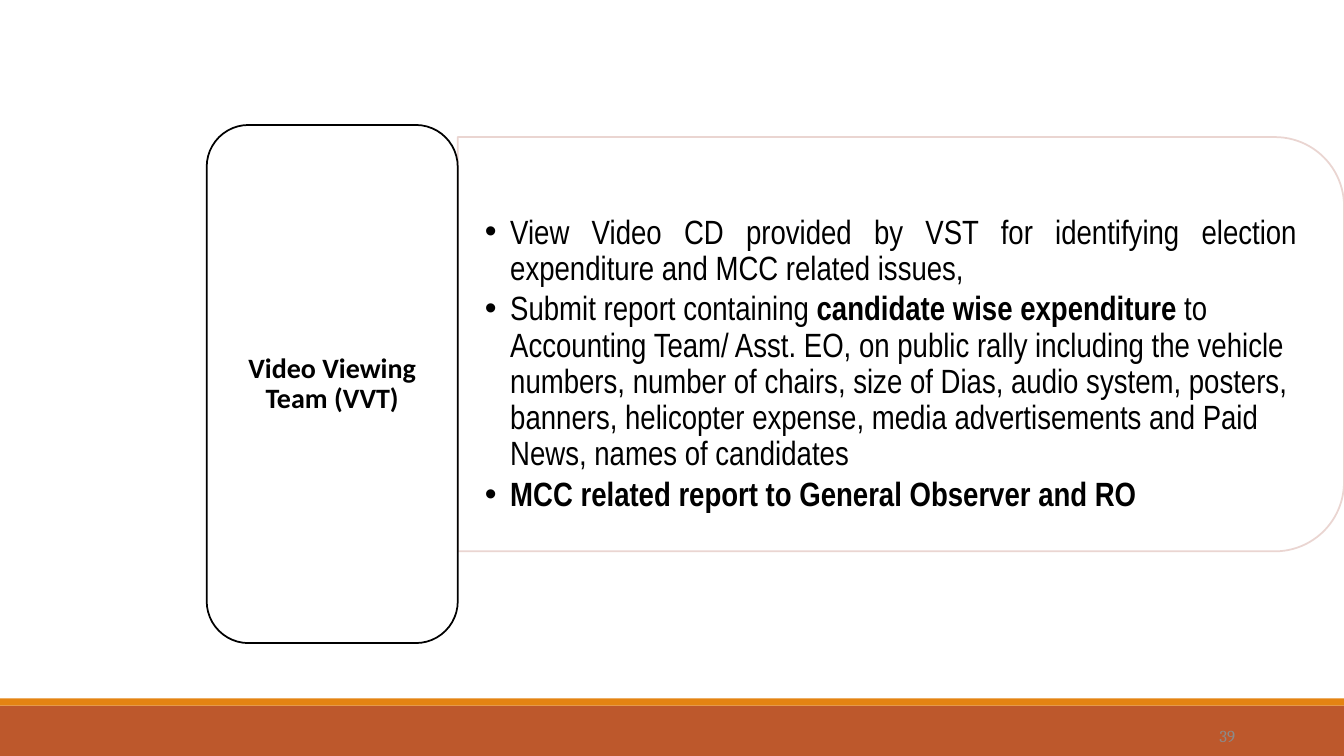
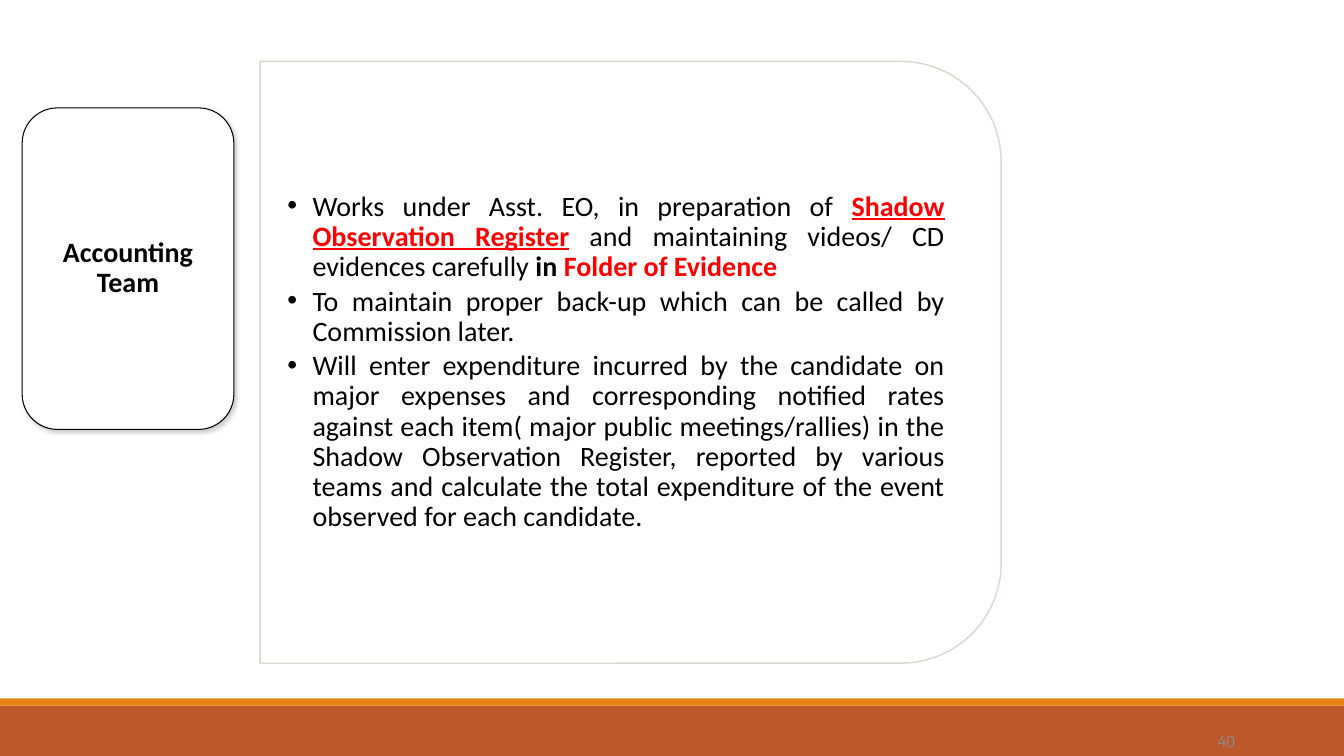
from lxml import etree
from pptx import Presentation
from pptx import util as u
from pptx.dml.color import RGBColor
from pptx.enum import shapes, text
from pptx.oxml import ns

WIDE, HIGH = 13.33, 7.5
BLACK, RED, WHITE = "000000", "FF0000", "FFFFFF"
BANDS = [(7, 0.5, "BD582C"), (6.93, 0.07, "E48312")]
LEFT, JUSTIFY = text.PP_ALIGN.LEFT, text.PP_ALIGN.JUSTIFY
CENTER, RIGHT = text.PP_ALIGN.CENTER, text.PP_ALIGN.RIGHT
BOLD = {"bold": True}
RED_BOLD = {"bold": True, "color": RED}
RED_LINK = {"bold": True, "color": RED, "underline": True}

SLIDES = [
    {
        "number": "39", "number_top": 7.15,
        "label": "Video Viewing Team (VVT)",
        "label_at": (2.05, 1.24, 2.49, 5.14), "label_line": 1.25, "shadow": False,
        "panel_at": (4.54, 1.36, 8.79, 4.11), "panel_line": ("E8D1CD", 1.25),
        "text_at": (4.54, 1.76, 8.59, 3.71), "font": ("Arial Narrow", 24),
        "bullets": [
            (JUSTIFY, [("View Video CD provided by VST for identifying election "
                        "expenditure and MCC related issues, ", {})]),
            (LEFT, [("Submit report containing ", {}),
                    ("candidate wise expenditure ", BOLD),
                    ("to Accounting Team/ Asst. EO, on public rally including the "
                     "vehicle numbers, number of chairs, size of Dias, audio system, "
                     "posters, banners, helicopter expense, media advertisements and "
                     "Paid News, names of candidates", {})]),
            (JUSTIFY, [("MCC related report to General Observer and RO", BOLD)]),
        ],
    },
    {
        "number": "40", "number_top": 7.2,
        "label": "Accounting Team",
        "label_at": (0.22, 1.07, 2.1, 3.19), "label_line": 0.75, "shadow": True,
        "panel_at": (2.58, 0.61, 7.35, 5.97), "panel_line": ("D9D1CF", 1),
        "text_at": (2.58, 0.9, 7.06, 5.39), "font": ("Calibri", 20),
        "bullets": [
            (JUSTIFY, [("Works under Asst. EO, in preparation of ", {}),
                       ("Shadow Observation Register", RED_LINK),
                       (" and maintaining videos/ CD evidences carefully ", {}),
                       ("in ", BOLD),
                       ("Folder of Evidence", RED_BOLD)]),
            (JUSTIFY, [("To maintain proper back-up which can be called by "
                        "Commission later.", {})]),
            (JUSTIFY, [("Will enter expenditure incurred by the candidate on major "
                        "expenses and corresponding notified rates against each item( "
                        "major public meetings/rallies) in the Shadow Observation "
                        "Register, reported by various teams and calculate the total "
                        "expenditure of the event observed for each candidate.", {})]),
        ],
    },
]


def color(value):
    return RGBColor.from_string(value)


def add_xml(parent, tag, **values):
    element = etree.SubElement(parent, ns.qn(tag))
    for name, value in values.items():
        element.set(name, str(value))
    return element


def add_shape(page, kind, at, fill=None, line=None):
    shape = page.shapes.add_shape(kind, *map(u.Inches, at))
    shape.shadow.inherit = False
    if fill:
        shape.fill.solid()
        shape.fill.fore_color.rgb = color(fill)
    else:
        shape.fill.background()
    if line:
        shape.line.color.rgb = color(line[0])
        shape.line.width = u.Pt(line[1])
    else:
        shape.line.fill.background()
    return shape


def set_frame(shape, across, down, anchor=text.MSO_ANCHOR.MIDDLE):
    frame = shape.text_frame
    layout = {"word_wrap": True, "vertical_anchor": anchor,
              "margin_left": u.Inches(across), "margin_right": u.Inches(across),
              "margin_top": u.Inches(down), "margin_bottom": u.Inches(down)}
    for name, value in layout.items():
        setattr(frame, name, value)
    return frame


def write(para, align, spans, font, spacing=0.9):
    para.alignment, para.line_spacing = align, spacing
    for words, style in spans:
        span = para.add_run()
        span.text = words
        look = {"name": font[0], "size": u.Pt(font[1]), "bold": False, **style}
        span.font.color.rgb = color(look.pop("color", BLACK))
        for name, value in look.items():
            setattr(span.font, name, value)


def add_bullets(page, at, bullets, font):
    frame = set_frame(page.shapes.add_textbox(*map(u.Inches, at)), 0.27, 0.14)
    for index, (align, spans) in enumerate(bullets):
        para = frame.add_paragraph() if index else frame.paragraphs[0]
        write(para, align, spans, font)
        if index < len(bullets) - 1:
            para.space_after = u.Pt(3)
        properties = para._p.get_or_add_pPr()
        properties.set("marL", str(u.Inches(0.25)))
        properties.set("indent", str(-u.Inches(0.25)))
        add_xml(properties, "a:buFont", typeface="Arial")
        add_xml(properties, "a:buChar", char="•")


def add_panel(page, at, line):
    left, top, width, height = at
    turn = (width - height) / 2
    panel = add_shape(page, shapes.MSO_SHAPE.ROUND_2_SAME_RECTANGLE,
                      (left + turn, top - turn, height, width), line=line)
    panel.rotation = 90
    tint = panel.line._ln.find(".//" + ns.qn("a:srgbClr"))
    add_xml(tint, "a:alpha", val=90000)


def add_label(page, at, words, width, shadow):
    label = add_shape(page, shapes.MSO_SHAPE.ROUNDED_RECTANGLE, at, WHITE, (BLACK, width))
    if shadow:
        effects = label._element.spPr.find(ns.qn("a:effectLst"))
        cast = add_xml(effects, "a:outerShdw", blurRad=u.Pt(3), dist=u.Pt(2),
                       dir=45 * 60000, rotWithShape=0)
        add_xml(add_xml(cast, "a:srgbClr", val=BLACK), "a:alpha", val=20000)
    frame = set_frame(label, 0.08, 0.04)
    write(frame.paragraphs[0], CENTER, [(words, BOLD)], ("Calibri", 20))


def add_footer(page, number, top):
    for band_top, height, fill in BANDS:
        add_shape(page, shapes.MSO_SHAPE.RECTANGLE, (0, band_top, WIDE, height), fill)
    box = page.shapes.add_textbox(*map(u.Inches, (11.25, top, 1, 0.3)))
    frame = set_frame(box, 0, 0)
    write(frame.paragraphs[0], RIGHT, [(number, {"color": "8B8B8B"})], ("Cambria", 12), 1)


def main():
    deck = Presentation()
    deck.slide_width, deck.slide_height = u.Inches(WIDE), u.Inches(HIGH)
    for item in SLIDES:
        page = deck.slides.add_slide(deck.slide_layouts[6])
        add_footer(page, item["number"], item["number_top"])
        add_panel(page, item["panel_at"], item["panel_line"])
        add_bullets(page, item["text_at"], item["bullets"], item["font"])
        add_label(page, item["label_at"], item["label"], item["label_line"], item["shadow"])
    deck.save("out.pptx")


if __name__ == "__main__":
    main()
